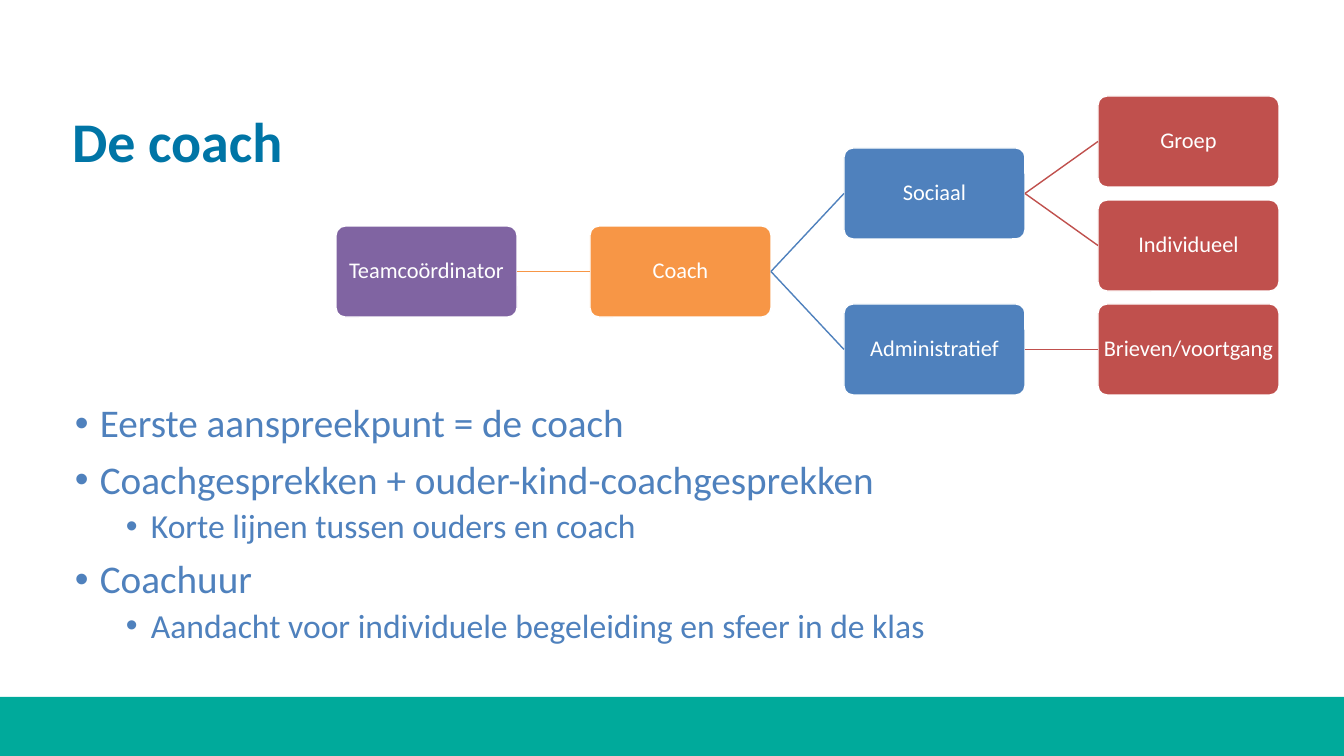
from lxml import etree
from pptx import Presentation
from pptx.dml.color import RGBColor
from pptx.enum.shapes import MSO_CONNECTOR, MSO_SHAPE
from pptx.enum.text import MSO_ANCHOR, MSO_AUTO_SIZE, PP_ALIGN
from pptx.oxml.ns import qn
from pptx.util import Emu, Pt

RECT, ROUNDED = MSO_SHAPE.RECTANGLE, MSO_SHAPE.ROUNDED_RECTANGLE
STRAIGHT = MSO_CONNECTOR.STRAIGHT
TOP, MIDDLE = MSO_ANCHOR.TOP, MSO_ANCHOR.MIDDLE
LEFT, CENTER = PP_ALIGN.LEFT, PP_ALIGN.CENTER
NO_AUTOFIT = MSO_AUTO_SIZE.NONE
LEFT_SIDE, RIGHT_SIDE = 1, 3

COLORS = {
    "white": "FFFFFF", "teal": "00AA9B", "title": "0075A6", "purple": "8064A2",
    "orange": "F79646", "blue": "4F81BD", "red": "C0504D",
}
LEVEL_COLORS = ["purple", "orange", "blue", "red"]

CHART_LEFT, CHART_TOP = 336, 96
COLUMN_STEP, ROW_STEP = 254, 104
BOX_WIDTH, BOX_HEIGHT = 181, 91

ORGANISATION = ("Teamcoördinator", 1.25, [
    ("Coach", 1.25, [
        ("Sociaal", 0.5, [("Groep", 0, []), ("Individueel", 1, [])]),
        ("Administratief", 2, [("Brieven/voortgang", 2, [])]),
    ]),
])
COACH_POINTS = [
    (0, "Eerste aanspreekpunt = de coach"),
    (0, "Coachgesprekken + ouder-kind-coachgesprekken"),
    (1, "Korte lijnen tussen ouders en coach"),
    (0, "Coachuur"),
    (1, "Aandacht voor individuele begeleiding en sfeer in de klas"),
]
BULLET_SIZES, BULLET_SPACES, BULLET_MARGINS = (28, 24), (10, 5), (25, 76)


def px(length):
    return Emu(round(length * 914400 / 100.8))


def rgb(name):
    return RGBColor.from_string(COLORS[name])


class CoachSlide:
    """Draws the parts of the coach slide in one shared style."""

    font = "Calibri"

    def __init__(self, presentation):
        self.slide = presentation.slides.add_slide(presentation.slide_layouts[5])
        self.shapes = self.slide.shapes

    def style(self, paragraph, size, color, align=LEFT, bold=False):
        paragraph.alignment = align
        paragraph.line_spacing = 0.9
        for run in paragraph.runs:
            run.font.name = self.font
            run.font.size = Pt(size)
            run.font.bold = bold
            run.font.color.rgb = rgb(color)

    def title(self, text, left, top, width, height):
        heading = self.shapes.title
        heading.left, heading.top = px(left), px(top)
        heading.width, heading.height = px(width), px(height)
        heading.fill.solid()
        heading.fill.fore_color.rgb = rgb("white")
        frame = heading.text_frame
        frame.text = text
        frame.vertical_anchor = TOP
        frame.auto_size = NO_AUTOFIT
        self.style(frame.paragraphs[0], 40, "title", bold=True)

    def block(self, preset, color, left, top, width, height):
        block = self.shapes.add_shape(preset, px(left), px(top), px(width), px(height))
        block.shadow.inherit = False
        block.fill.solid()
        block.fill.fore_color.rgb = rgb(color)
        block.line.fill.background()
        return block

    def role(self, text, color, left, top):
        role = self.block(ROUNDED, color, left, top, BOX_WIDTH, BOX_HEIGHT)
        role.adjustments[0] = 0.1
        role.line.color.rgb = rgb("white")
        role.line.width = Pt(1)
        frame = role.text_frame
        frame.text = text
        frame.word_wrap = True
        frame.vertical_anchor = MIDDLE
        frame.margin_left = frame.margin_right = px(3)
        frame.margin_top = frame.margin_bottom = px(3)
        self.style(frame.paragraphs[0], 16, "white", CENTER)
        return role

    def link(self, parent, child, color):
        link = self.shapes.add_connector(STRAIGHT, 0, 0, 0, 0)
        link.begin_connect(parent, RIGHT_SIDE)
        link.end_connect(child, LEFT_SIDE)
        link.line.color.rgb = rgb(color)
        link.line.width = Pt(1)
        etree.SubElement(link._element.spPr, qn("a:effectLst"))

    def branch(self, node, level=0):
        text, row, children = node
        role = self.role(text, LEVEL_COLORS[level],
                         CHART_LEFT + level * COLUMN_STEP, CHART_TOP + row * ROW_STEP)
        for child in children:
            self.link(role, self.branch(child, level + 1), LEVEL_COLORS[level + 1])
        return role

    def bullets(self, points, left, top, width, height):
        frame = self.shapes.add_textbox(px(left), px(top), px(width), px(height)).text_frame
        frame.word_wrap = True
        for index, (level, text) in enumerate(points):
            point = frame.add_paragraph() if index else frame.paragraphs[0]
            point.text = text
            point.level = level
            properties = point._p.get_or_add_pPr()
            properties.set("marL", str(px(BULLET_MARGINS[level])))
            properties.set("indent", str(px(-25)))
            etree.SubElement(properties, qn("a:buFont"), typeface="Arial")
            etree.SubElement(properties, qn("a:buChar"), char="•")
            if index:
                point.space_before = Pt(BULLET_SPACES[level])
            self.style(point, BULLET_SIZES[level], "blue")


def main():
    presentation = Presentation()
    presentation.slide_width, presentation.slide_height = px(1344), px(756)
    coach = CoachSlide(presentation)
    coach.block(RECT, "teal", 0, 697, 1344, 59)
    coach.title("De coach", 62, 109, 1159, 146)
    coach.bullets(COACH_POINTS, 65, 399, 1157, 284)
    coach.branch(ORGANISATION)
    presentation.save("out.pptx")


if __name__ == "__main__":
    main()
